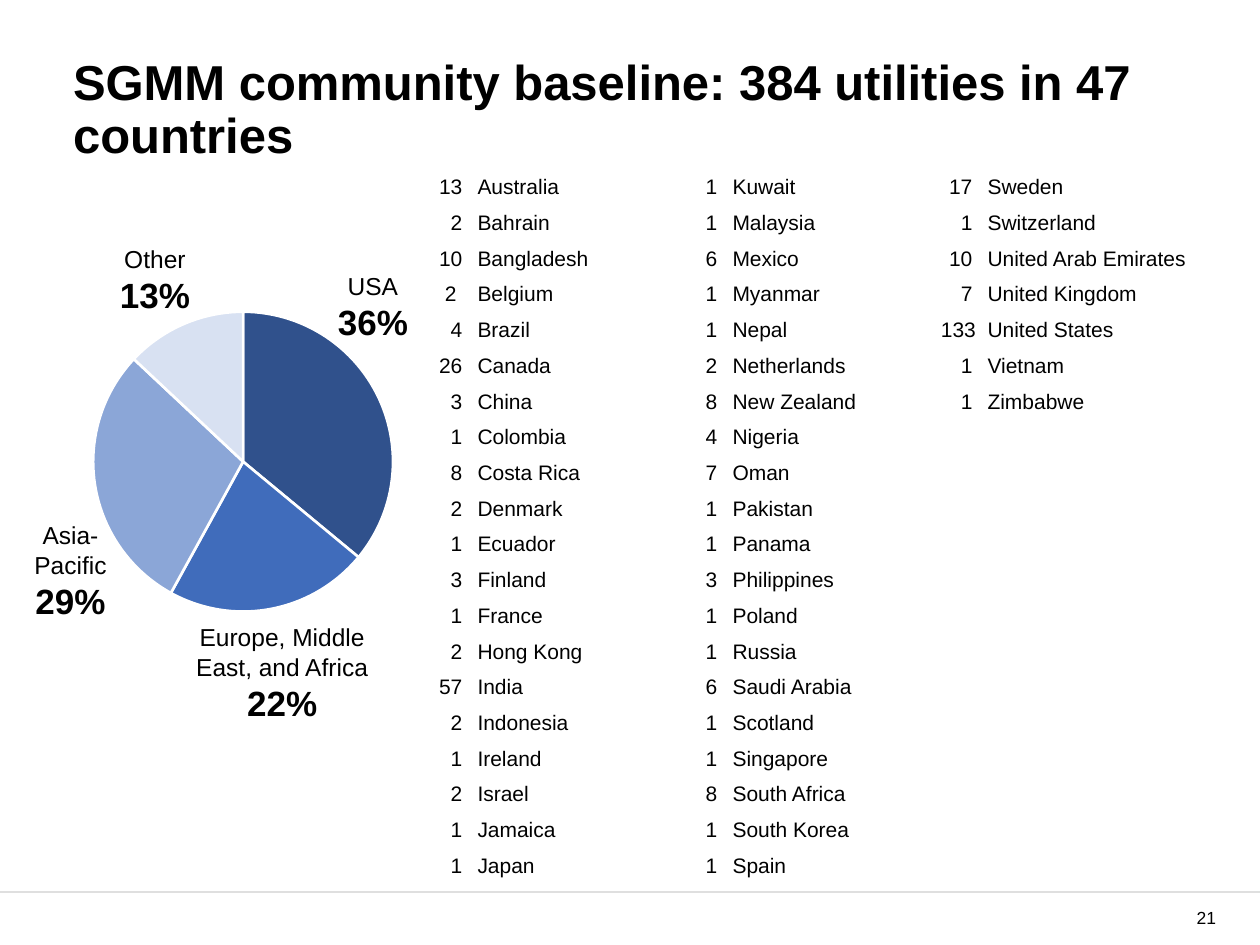
from lxml.etree import SubElement
from pptx import Presentation
from pptx.chart.data import CategoryChartData
from pptx.dml.color import RGBColor
from pptx.enum.chart import XL_CHART_TYPE
from pptx.enum.shapes import MSO_CONNECTOR, MSO_SHAPE
from pptx.enum.text import MSO_ANCHOR, MSO_AUTO_SIZE, PP_ALIGN
from pptx.oxml.ns import qn
from pptx.util import Inches, Pt

BLACK = RGBColor(0x00, 0x00, 0x00)
WHITE = RGBColor(0xFF, 0xFF, 0xFF)
GREY = RGBColor(0x80, 0x80, 0x80)
REGION_COLORS = [
    RGBColor(0x30, 0x51, 0x8C),
    RGBColor(0x40, 0x6C, 0xBB),
    RGBColor(0x8B, 0xA6, 0xD7),
    RGBColor(0xD8, 0xE1, 0xF2),
]
REGIONS = [
    ("USA", 36, (2.46, 2.1, 1, 0.67)),
    ("Europe, Middle East, and Africa", 22, (1.37, 4.89, 1.74, 0.91)),
    ("Asia-\vPacific", 29, (0.06, 4.08, 1, 0.91)),
    ("Other", 13, (0.73, 1.89, 1, 0.67)),
]
UTILITIES = [
    ("13", "Australia"), ("2", "Bahrain"), ("10", "Bangladesh"), ("2 ", "Belgium"),
    ("4", "Brazil"), ("26", "Canada"), ("3", "China"), ("1", "Colombia"),
    ("8", "Costa Rica"), ("2", "Denmark"), ("1", "Ecuador"), ("3", "Finland"),
    ("1", "France"), ("2", "Hong Kong"), ("57", "India"), ("2", "Indonesia"),
    ("1", "Ireland"), ("2", "Israel"), ("1", "Jamaica"), ("1", "Japan"),
    ("1", "Kuwait"), ("1", "Malaysia"), ("6", "Mexico"), ("1", "Myanmar"),
    ("1", "Nepal"), ("2", "Netherlands"), ("8", "New Zealand"), ("4", "Nigeria"),
    ("7", "Oman"), ("1", "Pakistan"), ("1", "Panama"), ("3", "Philippines"),
    ("1", "Poland"), ("1", "Russia"), ("6", "Saudi Arabia"), ("1", "Scotland"),
    ("1", "Singapore"), ("8", "South Africa"), ("1", "South Korea"), ("1", "Spain"),
    ("17", "Sweden"), ("1", "Switzerland"), ("10", "United Arab Emirates"),
    ("7", "United Kingdom"), ("133", "United States"), ("1", "Vietnam"),
    ("1", "Zimbabwe"),
]


class BaselineSlide:
    """Holds the slide and its style, and adds each kind of element."""

    def __init__(self, slide, font="Arial"):
        self.slide = slide
        self.font = font

    def rule(self, left, right, y):
        rule = self.slide.shapes.add_connector(
            MSO_CONNECTOR.STRAIGHT, Inches(left), Inches(y), Inches(right), Inches(y))
        rule.line.color.rgb = GREY
        rule.line.width = Pt(1)
        SubElement(rule._element.spPr, qn("a:effectLst"))

    def veil(self, box, opacity):
        veil = self.slide.shapes.add_shape(MSO_SHAPE.RECTANGLE, *map(Inches, box))
        veil.shadow.inherit = False
        veil.line.fill.background()
        veil.fill.solid()
        veil.fill.fore_color.rgb = WHITE
        color = veil._element.spPr.find(qn("a:solidFill"))[0]
        SubElement(color, qn("a:alpha"), val=str(opacity * 1000))

    def text(self, box, lines, align=PP_ALIGN.LEFT, anchor=MSO_ANCHOR.TOP,
             insets=(0.1, 0.05, 0.1, 0.05)):
        frame = self.slide.shapes.add_textbox(*map(Inches, box)).text_frame
        frame.word_wrap = True
        frame.auto_size = MSO_AUTO_SIZE.NONE
        frame.vertical_anchor = anchor
        (frame.margin_left, frame.margin_top,
         frame.margin_right, frame.margin_bottom) = map(Inches, insets)
        frame.text = "\n".join(wording for wording, size, bold in lines)
        for paragraph, (wording, size, bold) in zip(frame.paragraphs, lines):
            paragraph.alignment = align
            for run in paragraph.runs:
                run.font.name = self.font
                run.font.size = Pt(size)
                run.font.bold = bold
                run.font.color.rgb = BLACK
        return frame

    def tabbed_columns(self, box, rows, columns, tabs, gap):
        lines = [(f"\t{count}\t{country}", 12, False) for count, country in rows]
        frame = self.text(box, lines, insets=(0, 0.05, 0.1, 0.05))
        frame._txBody.bodyPr.set("numCol", str(columns))
        for index, paragraph in enumerate(frame.paragraphs):
            tab_list = SubElement(paragraph._p.get_or_add_pPr(), qn("a:tabLst"))
            for position, align in tabs:
                SubElement(tab_list, qn("a:tab"), pos=str(Inches(position)), algn=align)
            if index:
                paragraph.space_before = Pt(gap)

    def pie(self, box, values, colors, diameter):
        data = CategoryChartData()
        data.categories = [str(number + 1) for number in range(len(values))]
        data.add_series("Series 1", values)
        chart = self.slide.shapes.add_chart(
            XL_CHART_TYPE.PIE, *map(Inches, box), data).chart
        chart.has_legend = False
        chart.has_title = False
        chart.font.name = self.font
        chart.font.size = Pt(10)
        chart.font.color.rgb = BLACK
        plot = chart.plots[0]
        plot.vary_by_categories = True
        for index, color in enumerate(colors):
            slice_format = plot.series[0].points[index].format
            slice_format.fill.solid()
            slice_format.fill.fore_color.rgb = color
            slice_format.line.color.rgb = WHITE
            slice_format.line.width = Pt(1.5)
        self.fit_plot(chart, diameter / box[2], diameter / box[3])

    def fit_plot(self, chart, width, height):
        plot_area = chart._chartSpace.chart.plotArea
        for old_layout in plot_area.findall(qn("c:layout")):
            plot_area.remove(old_layout)
        layout = SubElement(plot_area, qn("c:layout"))
        plot_area.insert(0, layout)
        manual = SubElement(layout, qn("c:manualLayout"))
        settings = [("layoutTarget", "inner"), ("xMode", "edge"), ("yMode", "edge"),
                    ("x", (1 - width) / 2), ("y", (1 - height) / 2),
                    ("w", width), ("h", height)]
        for tag, value in settings:
            SubElement(manual, qn(f"c:{tag}"), val=str(value))


def main():
    presentation = Presentation()
    presentation.slide_width = Inches(10)
    presentation.slide_height = Inches(7.5)
    baseline = BaselineSlide(presentation.slides.add_slide(presentation.slide_layouts[6]))

    baseline.rule(0, 10, 7.08)
    baseline.veil((0, 0, 10, 7.5), opacity=75)
    title = baseline.text(
        (0.58, 0.46, 8.92, 0.85),
        [("SGMM community baseline: 384 utilities in 47 countries", 28, True)],
        insets=(0, 0, 0, 0))
    title.paragraphs[0].line_spacing = 0.9
    baseline.text((8.58, 7.13, 1.17, 0.3), [("21", 10, False)],
                  align=PP_ALIGN.RIGHT, anchor=MSO_ANCHOR.MIDDLE)
    baseline.tabbed_columns((3.42, 1.33, 6.17, 5.69), UTILITIES, columns=3,
                            tabs=[(0.25, "r"), (0.37, "l")], gap=6)
    baseline.pie((-0.07, 2.33, 4, 2.67), [share for region, share, box in REGIONS],
                 REGION_COLORS, diameter=2.38)
    for region, share, box in REGIONS:
        baseline.text(box, [(region, 14, False), (f"{share}%", 20, True)],
                      align=PP_ALIGN.CENTER)

    presentation.save("out.pptx")


if __name__ == "__main__":
    main()
